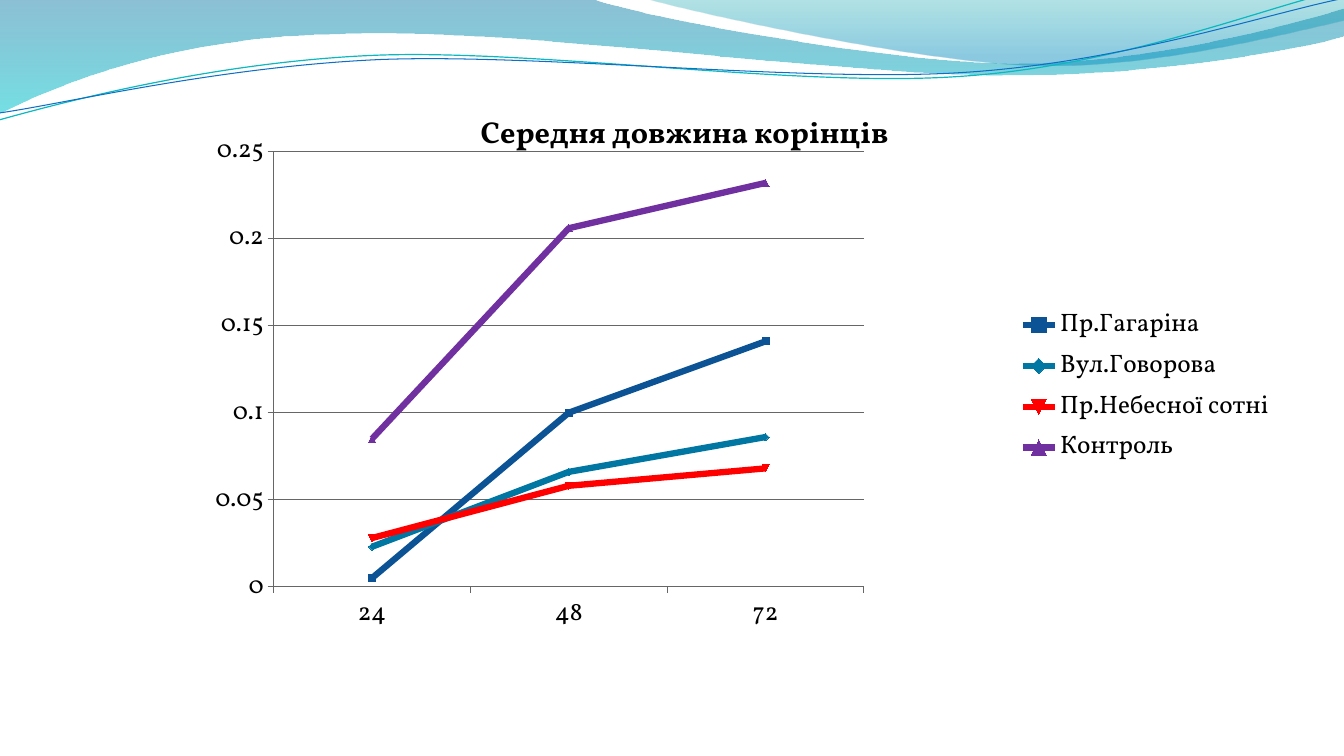
from lxml import etree
from pptx import Presentation
from pptx.chart.data import CategoryChartData
from pptx.dml.color import RGBColor
from pptx.enum.chart import XL_CHART_TYPE, XL_LEGEND_POSITION, XL_MARKER_STYLE, XL_TICK_MARK
from pptx.oxml.ns import qn
from pptx.util import Pt

LINE_MARKERS = XL_CHART_TYPE.LINE_MARKERS
LEGEND_RIGHT = XL_LEGEND_POSITION.RIGHT
SQUARE = XL_MARKER_STYLE.SQUARE
TICK_OUTSIDE = XL_TICK_MARK.OUTSIDE
TICK_NONE = XL_TICK_MARK.NONE

FONT = "Vollkorn"
COLORS = {
    "text": "000000",
    "axis": "666666",
    "wave_blue": "0074A1",
    "wave_cyan": "00C6CF",
    "crest_teal": "00A1A9",
    "crest_blue": "008BBF",
    "thread_teal": "0AB8BF",
    "thread_blue": "0F6FC6",
    "navy": "0B5394",
    "ocean": "0076A3",
    "red": "FF0000",
    "purple": "7030A0",
    "yellow": "FFFF00",
    "blue": "0070C0",
}

WAVE = [
    (0, 0), (422.6, -0.7),
    (456.5, 12.2, 637.2, 45.4, 727.9, 45.4),
    (819.4, 45.4, 920.2, 18.7, 959.8, 6.5),
    (961.2, 25.9),
    (943.9, 31.7, 835.2, 54.7, 715.7, 54),
    (596.9, 54, 366.5, 20.2, 247, 24.5),
    (123.8, 25.9, 43.9, 59.8, -0.7, 81.4),
]
CREST = [
    (460.1, -0.7),
    (488.9, 7.9, 654.5, 44.6, 738, 46.8),
    (821.5, 49.7, 923, 23, 959.8, 15.1),
    (959.8, 0),
]
TEAL_THREAD = [
    (-0.7, 85.7),
    (46.1, 72.7, 151.9, 44.6, 265.7, 39.6),
    (379.4, 34.6, 568.8, 62.6, 684, 54.7),
    (799.2, 47.5, 901.4, 5.8, 958.3, -7.2),
]
BLUE_THREAD = [
    (0, 80.6),
    (45.4, 74.2, 157, 47.5, 272.2, 42.5),
    (386.6, 38.2, 573.1, 59, 687.6, 51.8),
    (802.8, 44.6, 903.6, 10.1, 960.5, -1.4),
]

HOURS = ["24", "48", "72"]
ROOT_LENGTHS = [
    ("Пр.Гагаріна", (0.005, 0.1, 0.141), "navy", "yellow"),
    ("Вул.Говорова", (0.023, 0.066, 0.086), "ocean", "blue"),
    ("Пр.Небесної сотні", (0.028, 0.058, 0.068), "red", "red"),
    ("Контроль", (0.085, 0.206, 0.232), "purple", "purple"),
]


def color(name):
    return RGBColor.from_string(COLORS[name])


def bend_segments(shape, segments):
    lines = iter(list(shape._element.iter(qn("a:lnTo"))))
    for segment in segments:
        first = next(lines)
        if len(segment) == 6:
            curve = etree.Element(qn("a:cubicBezTo"))
            first.addprevious(curve)
            for line in (first, next(lines), next(lines)):
                curve.append(line[0])
                line.getparent().remove(line)


def add_outline(slide, outline, close):
    corners = [
        (Pt(segment[index]), Pt(segment[index + 1]))
        for segment in outline
        for index in range(0, len(segment), 2)
    ]
    builder = slide.shapes.build_freeform(*corners[0])
    builder.add_line_segments(corners[1:], close=close)
    shape = builder.convert_to_shape()
    bend_segments(shape, outline[1:])
    shape.shadow.inherit = False
    return shape


def add_wave(slide, outline, stops):
    shape = add_outline(slide, outline, True)
    shape.line.fill.background()
    shape.fill.gradient()
    shape.fill.gradient_angle = 270
    for stop, (position, name, _) in zip(shape.fill.gradient_stops, stops):
        stop.position = position
        stop.color.rgb = color(name)
    for element, (_, _, opacity) in zip(shape._element.iter(qn("a:srgbClr")), stops):
        etree.SubElement(element, qn("a:alpha"), val=str(opacity * 1000))


def add_thread(slide, outline, name, width):
    shape = add_outline(slide, outline, False)
    shape.fill.background()
    style_line(shape.line, name, width)


def set_layout(element, index, settings):
    layout = element.find(qn("c:layout"))
    if layout is not None:
        element.remove(layout)
    layout = etree.Element(qn("c:layout"))
    element.insert(index, layout)
    manual = etree.SubElement(layout, qn("c:manualLayout"))
    for tag, value in settings.items():
        etree.SubElement(manual, qn("c:" + tag), val=str(value))


def style_line(line, name, width):
    line.color.rgb = color(name)
    line.width = Pt(width)


def style_marker(marker, name):
    marker.size = 5
    marker.format.fill.solid()
    marker.format.fill.fore_color.rgb = color(name)
    marker.format.line.color.rgb = color(name)


def add_title(chart, text):
    title = chart.chart_title
    run = title.text_frame.paragraphs[0].add_run()
    run.text = text
    run.font.name = FONT
    run.font.size = Pt(21.6)
    run.font.bold = True
    run.font.color.rgb = color("text")
    element = title._element
    set_layout(element, 1, {"xMode": "edge", "yMode": "edge", "x": 0.296, "y": 0.008})
    overlay = element.find(qn("c:overlay"))
    if overlay is None:
        overlay = etree.SubElement(element, qn("c:overlay"))
    overlay.set("val", "1")


def style_axes(chart):
    for axis in (chart.category_axis, chart.value_axis):
        axis.major_tick_mark = TICK_OUTSIDE
        axis.minor_tick_mark = TICK_NONE
        style_line(axis.format.line, "axis", 0.75)
    value_axis = chart.value_axis
    value_axis.minimum_scale = 0
    value_axis.maximum_scale = 0.25
    value_axis.major_unit = 0.05
    value_axis.has_major_gridlines = True
    style_line(value_axis.major_gridlines.format.line, "axis", 0.75)


def style_series(plot):
    for series, (_, _, line_color, marker_color) in zip(plot.series, ROOT_LENGTHS):
        series.smooth = False
        style_line(series.format.line, line_color, 4.5)
        style_marker(series.marker, marker_color)
    first_series = plot.series[0]
    for index in range(len(HOURS)):
        point = first_series.points[index]
        style_line(point.format.line, "navy", 4.5)
        point.marker.style = SQUARE
        style_marker(point.marker, "yellow")


def add_root_chart(slide):
    data = CategoryChartData()
    data.categories = HOURS
    for name, lengths, _, _ in ROOT_LENGTHS:
        data.add_series(name, lengths)
    frame = slide.shapes.add_chart(LINE_MARKERS, Pt(96), Pt(72), Pt(822), Pt(408), data)
    chart = frame.chart
    chart.font.name = FONT
    chart.font.size = Pt(18)
    chart.font.color.rgb = color("text")
    add_title(chart, "Середня довжина корінців")
    style_axes(chart)
    chart.has_legend = True
    chart.legend.position = LEGEND_RIGHT
    chart.legend.include_in_layout = False
    plot = chart.plots[0]
    plot.vary_by_categories = False
    style_series(plot)
    plot_area = chart._chartSpace.find(".//" + qn("c:plotArea"))
    set_layout(plot_area, 0, {
        "layoutTarget": "inner", "xMode": "edge", "yMode": "edge",
        "x": 0.121, "y": 0.089, "w": 0.513, "h": 0.762,
    })


def main():
    presentation = Presentation()
    presentation.slide_width = Pt(960)
    presentation.slide_height = Pt(540)
    slide = presentation.slides.add_slide(presentation.slide_layouts[6])
    add_wave(slide, WAVE, [(0, "wave_blue", 45), (1, "wave_cyan", 55)])
    add_wave(slide, CREST, [(0, "crest_teal", 30), (0.8, "crest_blue", 45)])
    add_thread(slide, TEAL_THREAD, "thread_teal", 0.85)
    add_thread(slide, BLUE_THREAD, "thread_blue", 0.75)
    add_root_chart(slide)
    presentation.save("out.pptx")


if __name__ == "__main__":
    main()
